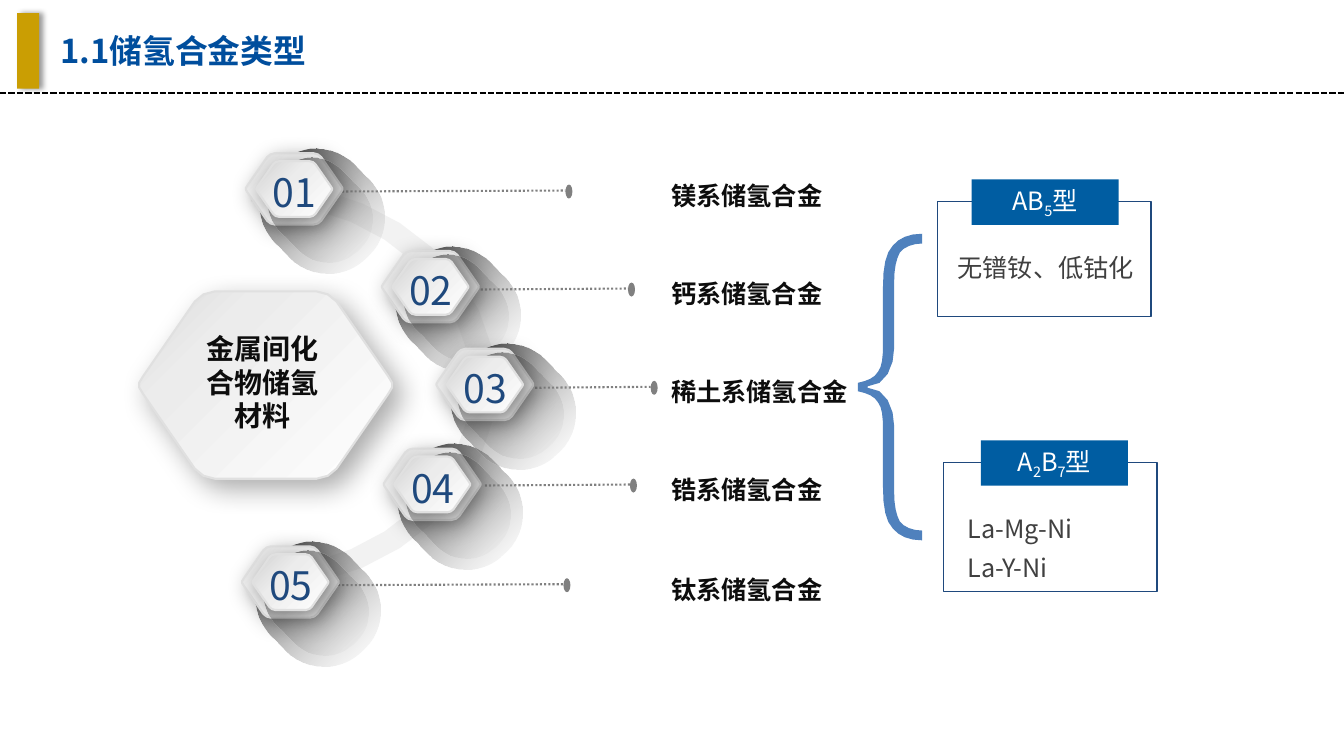
from dataclasses import dataclass

from lxml.etree import SubElement
from pptx import Presentation
from pptx.dml.color import RGBColor
from pptx.enum.dml import MSO_LINE
from pptx.enum.shapes import MSO_CONNECTOR, MSO_SHAPE
from pptx.enum.text import MSO_ANCHOR, PP_ALIGN
from pptx.oxml import parse_xml
from pptx.oxml.ns import nsdecls, qn
from pptx.util import Pt

Point = tuple[float, float]
Box = tuple[float, float, float, float]


@dataclass(frozen=True)
class Theme:
    font: str = "Noto Sans CJK SC"
    title: str = "004E9D"
    gold: str = "CA9E03"
    black: str = "000000"
    white: str = "FFFFFF"
    leader: str = "808080"
    ring: str = "F2F2F2"
    edge: str = "E0E0E0"
    navy: str = "1F497D"
    ink: str = "0D0D0D"
    brace: str = "4F81BD"
    tab: str = "005DA2"
    body: str = "404040"
    title_size: float = 23.4
    number_size: float = 28
    hub_size: float = 20
    label_size: float = 18


@dataclass(frozen=True)
class Stop:
    position: int
    color: str
    alpha: int = 100


@dataclass(frozen=True)
class Shadow:
    alpha: int
    blur: float
    distance: float
    angle: int


@dataclass(frozen=True)
class Alloy:
    number: str
    name: str
    left: float
    top: float
    leader_start: float
    leader_end: float
    leader_y: float


@dataclass(frozen=True)
class Panel:
    frame: Box
    tab: Point
    heading: tuple[str, ...]
    body: Box
    lines: tuple[str, ...]


THEME = Theme()
OUTER_FILL = (Stop(0, "FFFFFF"), Stop(73, "ECECEC"), Stop(100, "D9D9D9"))
INNER_FILL = (Stop(0, "FFFFFF"), Stop(60, "ECECEC"), Stop(100, "D1D1D1"))
LONG_CAST = (Stop(0, "000000"), Stop(100, "E8E8E8", 0))
SHORT_CAST = (Stop(0, "000000", 66), Stop(100, "E8E8E8", 0))

ALLOYS = (
    Alloy("01", "镁系储氢合金", 175.6, 109.4, 238.3, 403.9, 136.8),
    Alloy("02", "钙系储氢合金", 272.9, 179.3, 343.4, 448.6, 206.8),
    Alloy("03", "稀土系储氢合金", 311.8, 249.1, 382.3, 464.8, 277),
    Alloy("04", "锆系储氢合金", 274.2, 320.4, 346.3, 450, 346.8),
    Alloy("05", "钛系储氢合金", 172.9, 390.2, 235.4, 402.5, 418),
)
STACKING = (0, 4, 3, 1, 2)
PANELS = (
    Panel((669.6, 144, 152.6, 82.1), (694, 128.2), ("AB", "5", "型"),
          (678.2, 170.6, 144, 33.8), ("无镨钕、低钴化",)),
    Panel((673.9, 330.5, 152.6, 92.2), (700.6, 314.6), ("A", "2", "B", "7", "型"),
          (685.4, 357.1, 136, 49.7), ("La-Mg-Ni", "La-Y-Ni")),
)


def curve(start: Point, a: Point, b: Point, end: Point, steps: int) -> list[Point]:
    """Points along a cubic Bezier, without its start."""
    points = []
    for step in range(1, steps + 1):
        t = step / steps
        weights = ((1 - t) ** 3, 3 * t * (1 - t) ** 2, 3 * t * t * (1 - t), t ** 3)
        points.append(tuple(sum(w * p[axis] for w, p in zip(weights, (start, a, b, end)))
                            for axis in (0, 1)))
    return points


def trace(steps: int, start: Point, *segments: tuple[Point, ...]) -> list[Point]:
    """Follow segments of one point (line) or three points (curve)."""
    points = [start]
    for segment in segments:
        points += curve(points[-1], *segment, steps) if len(segment) == 3 else segment
    return points


def mirrored(points: list[Point], x: int = 1, y: int = 1) -> list[Point]:
    """Append the reflection of the points, in reverse order."""
    return points + [(px * x, py * y) for px, py in reversed(points)]


HEXAGON = mirrored(mirrored(trace(
    2, (0.2, -0.5), ((0.23, -0.5), (0.265, -0.475), (0.28, -0.446)), ((0.484, -0.048),),
    ((0.5, -0.012),)), y=-1), x=-1)
RING = mirrored(trace(
    8, (157, 0), ((157, -68), (95, -124), (16, -130.5)), ((0, -131.5),), ((0, -146),),
    ((18, -145),), ((106, -138), (175, -76), (175, 0))), y=-1)
BRACE = mirrored(trace(
    4, (0, -3), ((7, -4.5), (12, -6.5), (14.5, -11)), ((17.3, -14.5), (18, -21), (18, -30)),
    ((18, -71.5),), ((18, -86), (20, -96), (25, -101)),
    ((29.5, -106.5), (36.5, -109.5), (46, -109.5)), ((46, -102.5),),
    ((39, -102.5), (33, -100), (30, -96)), ((27.5, -91.5), (26, -84.5), (26, -75.5)),
    ((26, -28),), ((26, -15), (20, -0.5), (7, -0.5))), y=-1)


def rgb(color: str) -> RGBColor:
    return RGBColor.from_string(color)


def paint(shape, fill: str | None = None, line: str | None = None, width: float = 1) -> None:
    shape.shadow.inherit = False
    if fill:
        shape.fill.solid()
        shape.fill.fore_color.rgb = rgb(fill)
    else:
        shape.fill.background()
    if line:
        shape.line.color.rgb = rgb(line)
        shape.line.width = Pt(width)
    else:
        shape.line.fill.background()


def paint_gradient(shape, stops: tuple[Stop, ...], angle: int, line: str | None = None) -> None:
    paint(shape, None, line, 1.5)
    marks = "".join(
        f'<a:gs pos="{s.position * 1000}"><a:srgbClr val="{s.color}">'
        f'<a:alpha val="{s.alpha * 1000}"/></a:srgbClr></a:gs>' for s in stops)
    properties = shape._element.spPr
    properties.replace(properties.find(qn("a:noFill")), parse_xml(
        f'<a:gradFill {nsdecls("a")} rotWithShape="1"><a:gsLst>{marks}</a:gsLst>'
        f'<a:lin ang="{angle * 60000}" scaled="0"/></a:gradFill>'))


def cast_shadow(shape, shadow: Shadow) -> None:
    shape._element.spPr.find(qn("a:effectLst")).append(parse_xml(
        f'<a:outerShdw {nsdecls("a")} blurRad="{Pt(shadow.blur)}" dist="{Pt(shadow.distance)}" '
        f'dir="{shadow.angle * 60000}" algn="tl" rotWithShape="0"><a:srgbClr val="{THEME.black}">'
        f'<a:alpha val="{shadow.alpha * 1000}"/></a:srgbClr></a:outerShdw>'))


def add_preset(slide, kind: MSO_SHAPE, box: Box):
    return slide.shapes.add_shape(kind, *map(Pt, box))


def add_outline(slide, points: list[Point], origin: Point, width: float = 1, height: float = 1):
    placed = [(Pt(origin[0] + x * width), Pt(origin[1] + y * height)) for x, y in points]
    builder = slide.shapes.build_freeform(*placed[0])
    builder.add_line_segments(placed[1:], close=True)
    return builder.convert_to_shape()


def add_rule(slide, start: Point, end: Point, color: str, dash: MSO_LINE) -> None:
    rule = slide.shapes.add_connector(MSO_CONNECTOR.STRAIGHT, *map(Pt, start + end))
    rule.line.color.rgb = rgb(color)
    rule.line.width = Pt(1.5)
    rule.line.dash_style = dash
    SubElement(rule._element.spPr, qn("a:effectLst"))


def write(shape, lines: tuple[tuple[str, ...], ...], size: float, color: str, bold: bool = False,
          align: PP_ALIGN = PP_ALIGN.LEFT, anchor: MSO_ANCHOR = MSO_ANCHOR.TOP,
          inset: Point = (7.2, 3.6), spacing: float = 1.0) -> None:
    """Fill a shape with lines made of parts; a part that is a lone digit is a subscript."""
    frame = shape.text_frame
    frame.word_wrap = True
    frame.vertical_anchor = anchor
    frame.margin_left = frame.margin_right = Pt(inset[0])
    frame.margin_top = frame.margin_bottom = Pt(inset[1])
    for index, parts in enumerate(lines):
        paragraph = frame.add_paragraph() if index else frame.paragraphs[0]
        paragraph.alignment = align
        paragraph.line_spacing = spacing
        for part in parts:
            run = paragraph.add_run()
            run.text = part
            if len(part) == 1 and part.isdigit():
                run._r.get_or_add_rPr().set("baseline", "-25000")
        font = paragraph.font
        font.size, font.bold, font.name = Pt(size), bold, THEME.font
        font.color.rgb = rgb(color)
        SubElement(font._element, qn("a:ea"), typeface=THEME.font)


def add_text(slide, box: Box, lines: tuple[tuple[str, ...], ...], size: float, color: str,
             **style) -> None:
    write(slide.shapes.add_textbox(*map(Pt, box)), lines, size, color, **style)


def add_hexagon(slide, box: Box, stops: tuple[Stop, ...], shadow: Shadow) -> None:
    left, top, width, height = box
    hexagon = add_outline(slide, HEXAGON, (left + width / 2, top + height / 2), width, height)
    hexagon.rotation = 180
    paint_gradient(hexagon, stops, 45, THEME.edge)
    cast_shadow(hexagon, shadow)


def add_cast(slide, box: Box, stops: tuple[Stop, ...]) -> None:
    """Long soft shade that falls to the lower right of a hexagon."""
    cast = add_preset(slide, MSO_SHAPE.ROUNDED_RECTANGLE, box)
    cast.adjustments[0] = 0.476
    cast.rotation = 46
    paint_gradient(cast, stops, 0)


def add_leader(slide, alloy: Alloy) -> None:
    y = alloy.leader_y
    add_rule(slide, (alloy.leader_start, y), (alloy.leader_end, y - 0.7), THEME.leader,
             MSO_LINE.ROUND_DOT)
    paint(add_preset(slide, MSO_SHAPE.OVAL, (alloy.leader_end, y - 5, 5, 10)), THEME.leader)


def add_node(slide, alloy: Alloy) -> None:
    x, y = alloy.left, alloy.top
    add_cast(slide, (x + 8.7, y + 1.8, 91.4, 79.2), LONG_CAST)
    add_hexagon(slide, (x, y, 69, 51), OUTER_FILL, Shadow(32, 16, 5, 45))
    add_cast(slide, (x + 13.2, y + 9.6, 79.2, 62), SHORT_CAST)
    add_hexagon(slide, (x + 7.6, y + 5.7, 54, 39.8), INNER_FILL, Shadow(33, 12, 3, 45))
    add_text(slide, (x - 2.2, y + 7.4, 74.2, 41), ((alloy.number,),), THEME.number_size,
             THEME.navy, align=PP_ALIGN.CENTER)


def add_panel(slide, panel: Panel) -> None:
    paint(add_preset(slide, MSO_SHAPE.RECTANGLE, panel.frame), None, THEME.navy)
    tab = add_preset(slide, MSO_SHAPE.RECTANGLE, panel.tab + (105.1, 32.4))
    paint(tab, THEME.tab)
    write(tab, (panel.heading,), THEME.label_size, THEME.white, align=PP_ALIGN.CENTER,
          anchor=MSO_ANCHOR.MIDDLE, inset=(5.8, 2.9))
    add_text(slide, panel.body, tuple((line,) for line in panel.lines), THEME.label_size,
             THEME.body, inset=(5.8, 2.9), spacing=1.3)


def main() -> None:
    deck = Presentation()
    deck.slide_width, deck.slide_height = Pt(960), Pt(540)
    slide = deck.slides.add_slide(deck.slide_layouts[6])

    add_rule(slide, (0, 66.2), (960, 66.2), THEME.black, MSO_LINE.SQUARE_DOT)
    accent = add_preset(slide, MSO_SHAPE.RECTANGLE, (12.2, 9.4, 15.8, 54))
    paint(accent, THEME.gold)
    cast_shadow(accent, Shadow(40, 4, 3, 0))
    add_text(slide, (36, 15.8, 391, 41), (("1.1储氢合金类型",),), THEME.title_size, THEME.title,
             bold=True, anchor=MSO_ANCHOR.MIDDLE)

    for alloy in ALLOYS:
        add_leader(slide, alloy)
    paint(add_outline(slide, RING, (179.3, 275.4)), THEME.ring)
    for index in STACKING:
        add_node(slide, ALLOYS[index])
    add_hexagon(slide, (99.4, 208.1, 180.7, 133.9), OUTER_FILL, Shadow(32, 20, 9, 45))
    add_text(slide, (138.2, 233.3, 98.6, 79.9), (("金属间化合物储氢材料",),), THEME.hub_size,
             THEME.ink, bold=True, align=PP_ALIGN.CENTER)

    for alloy in ALLOYS:
        add_text(slide, (472.3, alloy.leader_y - 11.5, 145.4, 28.8), ((alloy.name,),),
                 THEME.label_size, THEME.ink, bold=True)
    paint(add_outline(slide, BRACE, (612.7, 276.5)), THEME.brace)
    for panel in PANELS:
        add_panel(slide, panel)
    deck.save("out.pptx")


if __name__ == "__main__":
    main()
